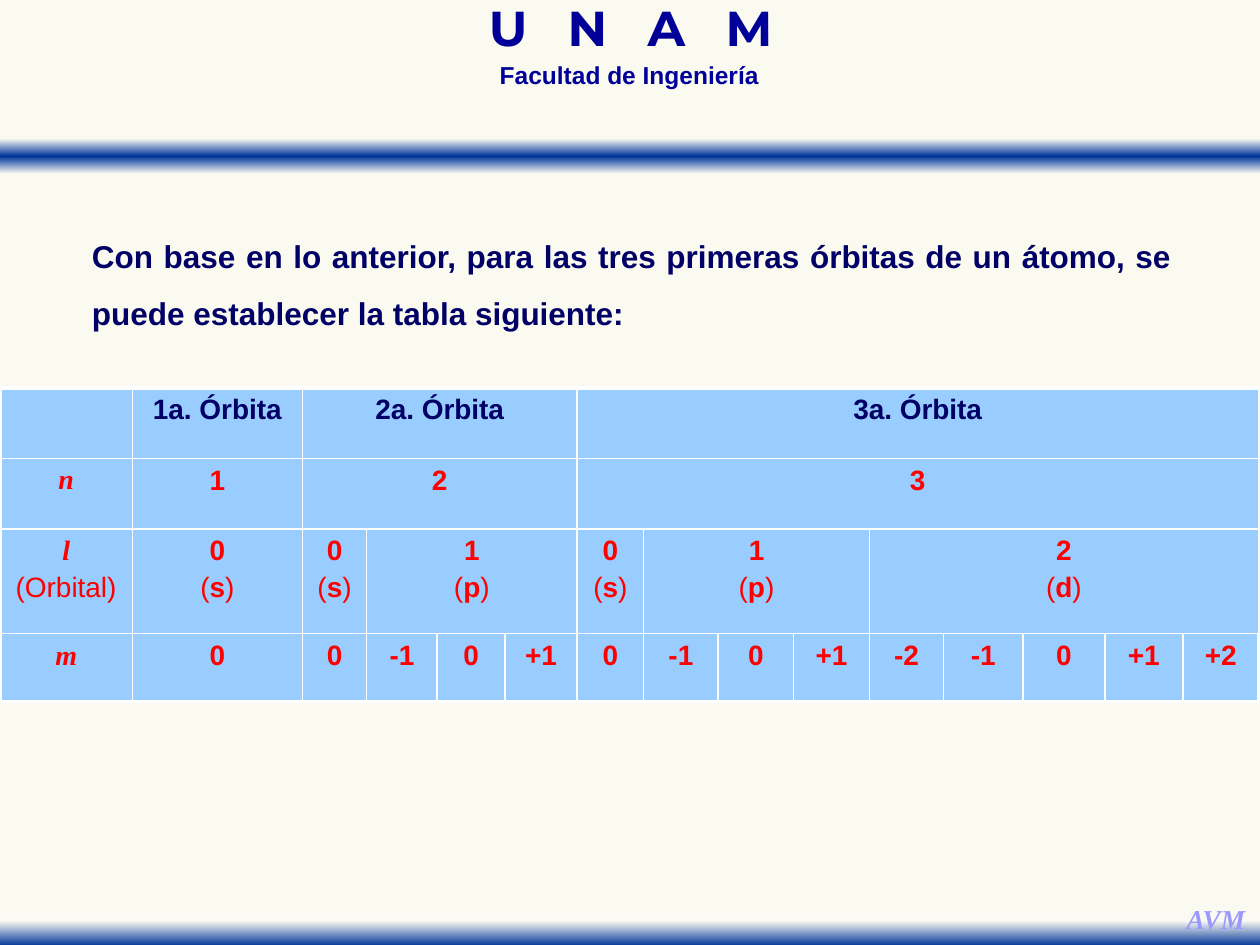
from dataclasses import dataclass

from lxml import etree
from pptx import Presentation
from pptx import util as u
from pptx.dml import color
from pptx.enum import shapes, text
from pptx.oxml import ns

Inches, Pt = u.Inches, u.Pt


@dataclass(frozen=True)
class Theme:
    background: str = "FAFAF0"
    band_edge: str = "FAFAF2"
    band: str = "003399"
    heading: str = "000099"
    body: str = "000066"
    value: str = "FF0000"
    signature: str = "9999FF"
    cell: str = "99CCFF"
    border: str = "FFFFFF"
    heading_font: str = "Montserrat"
    body_font: str = "Arial"
    symbol_font: str = "Times New Roman"
    heading_size: float = 28
    faculty_size: float = 14
    signature_size: float = 15.6
    body_size: float = 18
    table_size: float = 16
    thin: float = 1
    thick: float = 2.25


THEME = Theme()
COLUMNS = [1.05, 1.35, 0.51, 0.56, 0.54, 0.57, 0.53, 0.59,
           0.6, 0.6, 0.59, 0.63, 0.65, 0.62, 0.6]
ROWS = [0.56, 0.56, 0.83, 0.54]
ORBITS = [(1, 1), (2, 4), (3, 9)]
ORBITALS = "spd"


def rgb(value):
    return color.RGBColor.from_string(value)


def place(shape, box):
    shape.left, shape.top, shape.width, shape.height = map(Inches, box)


def add_run(paragraph, words, size, ink, font=THEME.body_font, bold=True, italic=False):
    run = paragraph.add_run()
    run.text = words
    run.font.size, run.font.name = Pt(size), font
    run.font.bold, run.font.italic = bold, italic
    run.font.color.rgb = rgb(ink)
    return run


def prepare_text(shape, box, alignment, line_spacing, wrap=True):
    place(shape, box)
    frame = shape.text_frame
    frame.word_wrap = wrap
    frame.auto_size = text.MSO_AUTO_SIZE.NONE
    frame.vertical_anchor = text.MSO_ANCHOR.TOP
    paragraph = frame.paragraphs[0]
    paragraph.alignment = alignment
    paragraph.line_spacing = line_spacing
    paragraph.space_before = Pt(0)
    return paragraph


def add_text_box(slide, box):
    return slide.shapes.add_textbox(*map(Inches, box))


def add_band(slide, box, stops):
    band = slide.shapes.add_shape(shapes.MSO_SHAPE.RECTANGLE, *map(Inches, box))
    band.shadow.inherit = False
    band.line.fill.background()
    band.fill.gradient()
    band.fill.gradient_angle = 270
    stop_list = band.element.spPr.find(".//" + ns.qn("a:gsLst"))
    for old_stop in list(stop_list):
        stop_list.remove(old_stop)
    for position, ink in stops:
        stop = etree.SubElement(stop_list, ns.qn("a:gs"), pos=str(position * 1000))
        etree.SubElement(stop, ns.qn("a:srgbClr"), val=ink)


def add_header(slide, box):
    left, top, width, height = box
    edge = THEME.band_edge
    add_band(slide, (left, top + height - 0.28, width, 0.28),
             [(0, edge), (50, THEME.band), (100, edge)])
    center = text.PP_ALIGN.CENTER
    title = prepare_text(slide.shapes.title, (left + 3.05, top + 0.06, 3.91, 0.43), center, 0.7)
    style = (THEME.heading_size, THEME.heading, THEME.heading_font)
    spaced = add_run(title, "U N A ", *style)
    spaced.font._element.set("spc", "760")
    add_run(title, "M", *style)
    faculty_box = (left + 3.21, top + 0.49, 3.57, 0.27)
    faculty = prepare_text(add_text_box(slide, faculty_box), faculty_box, center, 0.7)
    add_run(faculty, "Facultad de Ingeniería", THEME.faculty_size, THEME.heading)


def add_footer(slide, box):
    left, top, width, height = box
    add_band(slide, box, [(28, THEME.band_edge), (100, THEME.band)])
    signature_box = (left + width - 0.69, top - 0.05, 0.68, 0.37)
    signature = prepare_text(add_text_box(slide, signature_box), signature_box,
                             text.PP_ALIGN.CENTER, 0.7, wrap=False)
    add_run(signature, "AVM", THEME.signature_size, THEME.signature,
            THEME.symbol_font, italic=True)


def add_statement(slide, box):
    paragraph = prepare_text(slide.placeholders[1], box, text.PP_ALIGN.JUSTIFY, 1.5)
    properties = paragraph._p.get_or_add_pPr()
    properties.set("marL", "0")
    properties.set("indent", "0")
    etree.SubElement(properties, ns.qn("a:buNone"))
    add_run(paragraph, "Con base en lo anterior, para las tres primeras órbitas de un átomo, "
            "se puede establecer la tabla siguiente:", THEME.body_size, THEME.body)


def style_cell(cell, row, column):
    outer = {"L": column == 0, "R": column == len(COLUMNS) - 1,
             "T": row == 0, "B": row == len(ROWS) - 1}
    properties = cell._tc.get_or_add_tcPr()
    for side, is_outer in outer.items():
        weight = Pt(THEME.thick if is_outer else THEME.thin)
        line = etree.SubElement(properties, ns.qn(f"a:ln{side}"), w=str(int(weight)))
        fill = etree.SubElement(line, ns.qn("a:solidFill"))
        etree.SubElement(fill, ns.qn("a:srgbClr"), val=THEME.border)
    cell.fill.solid()
    cell.fill.fore_color.rgb = rgb(THEME.cell)


def write_cell(table, row, column, lines, span=1, ink=THEME.value, **style):
    cell = table.cell(row, column)
    if span > 1:
        cell.merge(table.cell(row, column + span - 1))
    frame = cell.text_frame
    for index, line in enumerate(lines):
        paragraph = frame.add_paragraph() if index else frame.paragraphs[0]
        paragraph.alignment = text.PP_ALIGN.CENTER
        paragraph.space_before = Pt(3 if index else 0)
        for words, bold in line:
            run_style = style if index == 0 else {}
            add_run(paragraph, words, THEME.table_size, ink, bold=bold, **run_style)


def add_quantum_table(slide, box):
    frame = slide.shapes.add_table(len(ROWS), len(COLUMNS), *map(Inches, box))
    table = frame.table
    table.first_row = table.horz_banding = False
    for column, width in zip(table.columns, COLUMNS):
        column.width = Inches(width)
    for row, height in zip(table.rows, ROWS):
        row.height = Inches(height)
    for row in range(len(ROWS)):
        for column in range(len(COLUMNS)):
            style_cell(table.cell(row, column), row, column)

    symbols = [[[("n", True)]], [[("l", True)], [("(Orbital)", False)]], [[("m", True)]]]
    for row, lines in enumerate(symbols, start=1):
        write_cell(table, row, 0, lines, font=THEME.symbol_font, italic=True)

    column = 1
    for orbit, span in ORBITS:
        write_cell(table, 0, column, [[(f"{orbit}a. Órbita", True)]], span, THEME.body)
        write_cell(table, 1, column, [[(str(orbit), True)]], span)
        for level in range(orbit):
            orbital = [("(", False), (ORBITALS[level], True), (")", False)]
            write_cell(table, 2, column, [[(str(level), True)], orbital], 2 * level + 1)
            for magnetic in range(-level, level + 1):
                label = f"{magnetic:+d}" if magnetic else "0"
                write_cell(table, 3, column, [[(label, True)]])
                column += 1


def main():
    presentation = Presentation()
    presentation.slide_width, presentation.slide_height = Inches(10), Inches(7.5)
    slide = presentation.slides.add_slide(presentation.slide_layouts[1])
    slide.background.fill.solid()
    slide.background.fill.fore_color.rgb = rgb(THEME.background)
    add_header(slide, (0, 0, 10, 1.38))
    add_footer(slide, (0, 7.23, 10, 0.28))
    add_quantum_table(slide, (0, 3.08, 10, 2.48))
    add_statement(slide, (0.63, 1.68, 8.77, 1))
    presentation.save("out.pptx")


if __name__ == "__main__":
    main()
